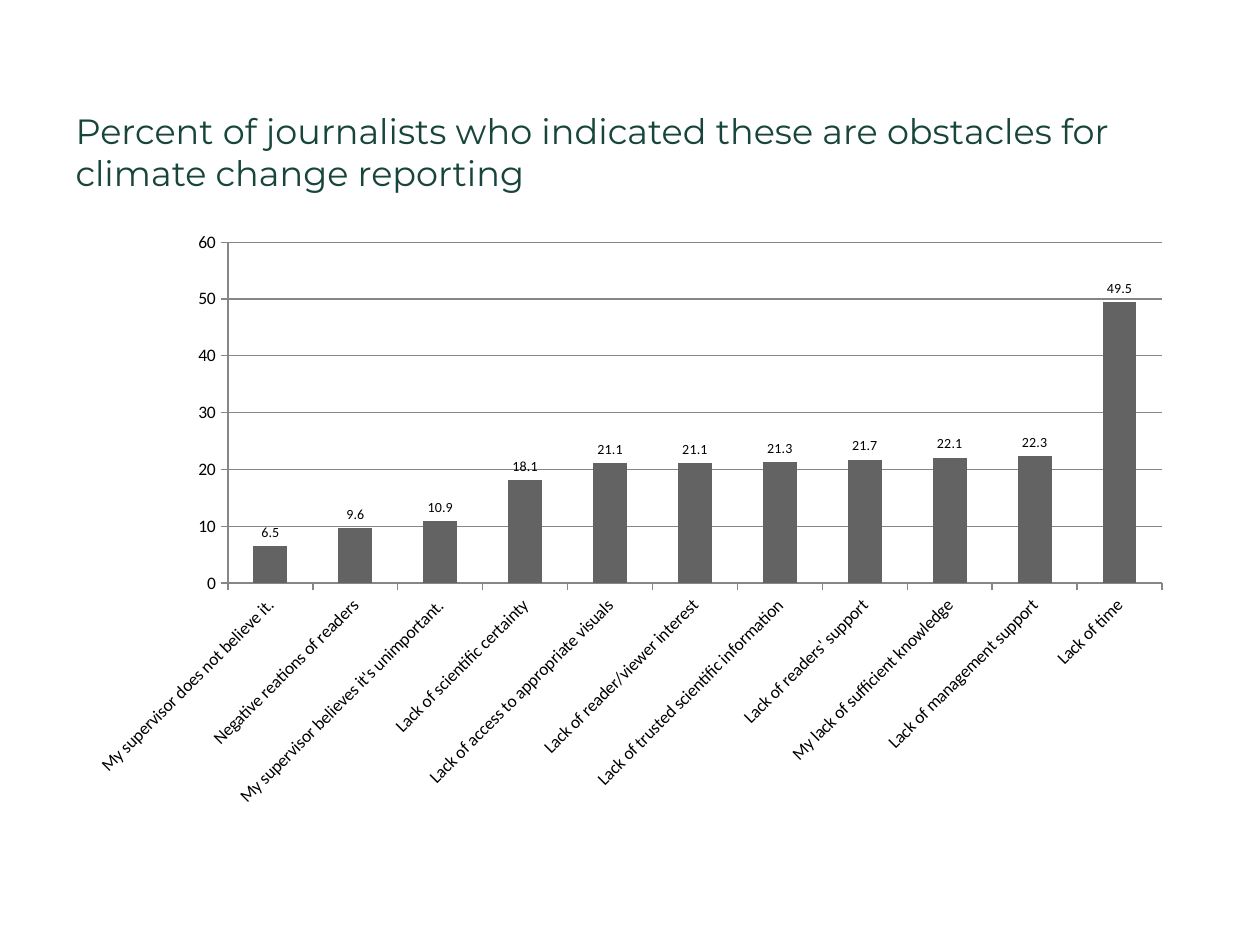
import pptx
import pptx.chart.data
import pptx.dml.color
import pptx.enum.chart
import pptx.enum.text
import pptx.oxml
import pptx.oxml.ns
import pptx.util

HUES = {"title": "18453B", "text": "000000", "bar": "636363",
        "line": "868686", "back": "FFFFFF"}
WIDE, HIGH = pptx.util.Inches(10), pptx.util.Inches(7.5)

TITLE = ("Percent of journalists who indicated these are obstacles for "
         "climate change reporting")
RATES = {
    "My supervisor does not believe it.": 6.5,
    "Negative reations of readers": 9.6,
    "My supervisor believes it's unimportant.": 10.9,
    "Lack of scientific certainty": 18.1,
    "Lack of access to appropriate visuals": 21.1,
    "Lack of reader/viewer interest": 21.1,
    "Lack of trusted scientific information": 21.3,
    "Lack of readers' support": 21.7,
    "My lack of sufficient knowledge": 22.1,
    "Lack of management support": 22.3,
    "Lack of time": 49.5,
}


def hue(name):
    return pptx.dml.color.RGBColor.from_string(HUES[name])


def apply(item, form):
    for key, value in form.items():
        setattr(item, key, value)


def style(font, face, size, name):
    apply(font, {"name": face, "size": pptx.util.Pt(size), "bold": False})
    font.color.rgb = hue(name)


def share(left, top, wide, high):
    """Turn percent shares of the slide into a box."""
    return [round(WIDE * left / 100), round(HIGH * top / 100),
            round(WIDE * wide / 100), round(HIGH * high / 100)]


def add_title(slide, box):
    title = slide.shapes.title
    apply(title, dict(zip(("left", "top", "width", "height"), box)))
    frame = title.text_frame
    apply(frame, {"text": TITLE, "word_wrap": True,
                  "auto_size": pptx.enum.text.MSO_AUTO_SIZE.NONE,
                  "vertical_anchor": pptx.enum.text.MSO_ANCHOR.TOP})
    para = frame.paragraphs[0]
    para.alignment = pptx.enum.text.PP_ALIGN.LEFT
    para.line_spacing = 1.0
    style(para.runs[0].font, "Montserrat", 20, "title")


def set_plot(chart, box, inner):
    """Fix the inner plot area, a box on the slide, within the chart box."""
    left, top, wide, high = box
    parts = {"x": (inner[0] - left) / wide, "y": (inner[1] - top) / high,
             "w": inner[2] / wide, "h": inner[3] / high}
    tags = "".join(f'<c:{key} val="{value}"/>' for key, value in parts.items())
    plan = pptx.oxml.parse_xml(
        f'<c:layout {pptx.oxml.ns.nsdecls("c")}><c:manualLayout>'
        '<c:layoutTarget val="inner"/><c:xMode val="edge"/>'
        f'<c:yMode val="edge"/>{tags}</c:manualLayout></c:layout>')
    area = chart._chartSpace.chart.plotArea
    for old in area.findall(pptx.oxml.ns.qn("c:layout")):
        area.remove(old)
    area.insert(0, plan)


def add_chart(slide, box, inner):
    data = pptx.chart.data.CategoryChartData()
    data.categories = list(RATES)
    data.add_series("Series 1", list(RATES.values()))
    kind = pptx.enum.chart.XL_CHART_TYPE.COLUMN_CLUSTERED
    chart = slide.shapes.add_chart(kind, *box, data).chart
    apply(chart, {"has_legend": False, "has_title": False})
    style(chart.font, "Calibri", 10, "text")
    set_plot(chart, box, inner)

    # Bars and their values
    plot = chart.plots[0]
    apply(plot, {"gap_width": 150, "vary_by_categories": False,
                 "has_data_labels": True})
    fill = plot.series[0].format.fill
    fill.solid()
    fill.fore_color.rgb = hue("bar")
    labels = plot.data_labels
    apply(labels, {"show_value": True,
                   "position": pptx.enum.chart.XL_LABEL_POSITION.OUTSIDE_END})
    style(labels.font, "Calibri", 8, "text")

    # Axes and grid
    cat, val = chart.category_axis, chart.value_axis
    apply(val, {"minimum_scale": 0, "maximum_scale": 60, "major_unit": 10,
                "has_major_gridlines": True})
    for axis in (cat, val):
        axis.major_tick_mark = pptx.enum.chart.XL_TICK_MARK.OUTSIDE
        style(axis.tick_labels.font, "Calibri", 10, "text")
    for part in (cat, val, val.major_gridlines):
        part.format.line.color.rgb = hue("line")
        part.format.line.width = pptx.util.Pt(0.75)

    # Slanted category names
    body = cat._element.find(".//" + pptx.oxml.ns.qn("a:bodyPr"))
    body.set("rot", str(-45 * 60000))
    body.set("vert", "horz")


def main():
    deck = pptx.Presentation()
    apply(deck, {"slide_width": WIDE, "slide_height": HIGH})
    slide = deck.slides.add_slide(deck.slide_layouts[5])
    fill = slide.background.fill
    fill.solid()
    fill.fore_color.rgb = hue("back")
    add_title(slide, share(5, 10.9, 90, 14.27))
    add_chart(slide, share(6, 23.33, 88, 63.33),
              share(18.1, 25.64, 74.13, 36.08))
    deck.save("out.pptx")


if __name__ == "__main__":
    main()
